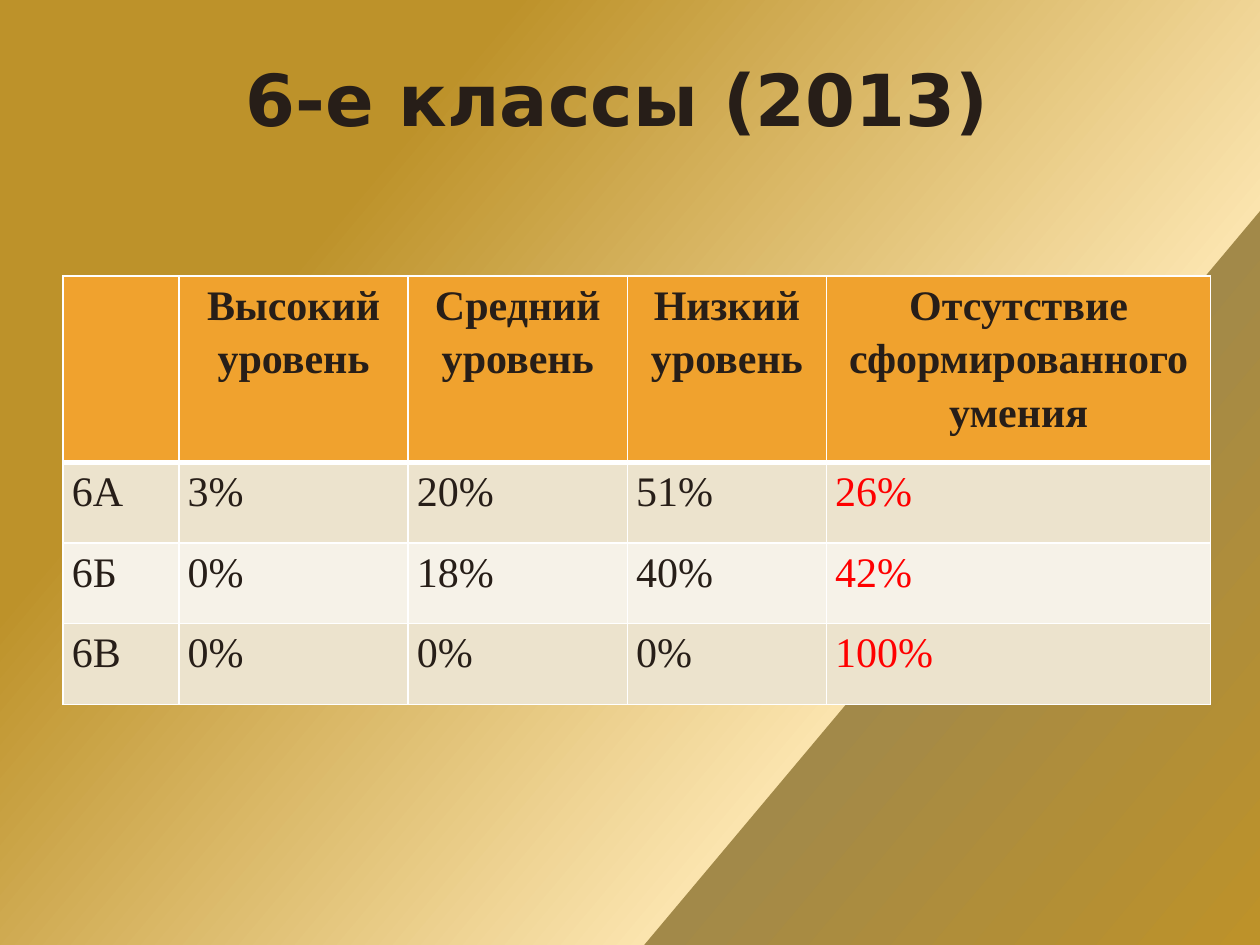
from dataclasses import dataclass

from lxml import etree
from pptx import Presentation
from pptx.dml.color import RGBColor
from pptx.enum.text import MSO_ANCHOR, MSO_AUTO_SIZE, PP_ALIGN
from pptx.oxml.ns import qn
from pptx.util import Inches, Pt

CENTER, LEFT = PP_ALIGN.CENTER, PP_ALIGN.LEFT
MIDDLE = MSO_ANCHOR.MIDDLE
NO_AUTOFIT = MSO_AUTO_SIZE.NONE
TITLE_ONLY = 5

TITLE = "6-е классы (2013) "
HEADER = ["", "Высокий уровень", "Средний уровень", "Низкий уровень",
          "Отсутствие сформированного умения"]
RESULTS = [
    ["6А", "3%", "20%", "51%", "26%"],
    ["6Б", "0%", "18%", "40%", "42%"],
    ["6В", "0%", "0%", "0%", "100%"],
]


@dataclass(frozen=True)
class Theme:
    ink: str = "271E18"
    alert: str = "FF0000"
    header: str = "F0A22E"
    bands: tuple = ("ECE3CD", "F6F2E8")
    border: str = "FFFFFF"
    background: tuple = ((0, "BD922A"), (25, "BD922A"), (70, "FBE4AE"),
                         (70, "A28949"), (100, "BD922A"))
    background_angle: int = 40
    title_font: str = "DejaVu Sans"
    table_font: str = "Times New Roman"
    title_size: int = 41
    table_size: int = 24
    thin: int = 1
    thick: int = 3


THEME = Theme()
SLIDE_W, SLIDE_H = 10, 7.5
MARGIN = 0.05 * SLIDE_W
TITLE_TOP, TITLE_H = 0.04 * SLIDE_H, 0.95
TABLE_TOP = 2.19
COLUMN_WIDTHS = [0.92, 1.82, 1.74, 1.58, 3.05]
ROW_HEIGHTS = [1.48] + [0.64] * len(RESULTS)
CELL_INSET = 0.07


def write(frame, text, *, font, size, color=THEME.ink, bold=False,
          align=LEFT, spacing=None):
    paragraph = frame.paragraphs[0]
    paragraph.alignment = align
    paragraph.line_spacing = spacing
    run = paragraph.add_run()
    run.text = text
    run.font.name, run.font.size, run.font.bold = font, Pt(size), bold
    run.font.color.rgb = RGBColor.from_string(color)


def paint_background(slide):
    fill = slide.background.fill
    fill.gradient()
    fill.gradient_angle = 360 - THEME.background_angle  # counter-clockwise
    stops = next(slide.element.iter(qn("a:gsLst")))
    for default_stop in list(stops):
        stops.remove(default_stop)
    for percent, color in THEME.background:
        stop = etree.SubElement(stops, qn("a:gs"), pos=str(percent * 1000))
        etree.SubElement(stop, qn("a:srgbClr"), val=color)


def set_borders(cell, **widths):
    """Draw cell borders; widths in points are keyed L, R, T, B in that order."""
    properties = cell._tc.get_or_add_tcPr()
    for side, width in widths.items():
        line = etree.SubElement(properties, qn(f"a:ln{side}"), w=str(Pt(width)))
        fill = etree.SubElement(line, qn("a:solidFill"))
        etree.SubElement(fill, qn("a:srgbClr"), val=THEME.border)


def add_title(slide):
    title = slide.shapes.title
    title.left, title.top = Inches(MARGIN), Inches(TITLE_TOP)
    title.width, title.height = Inches(SLIDE_W - 2 * MARGIN), Inches(TITLE_H)
    frame = title.text_frame
    frame.auto_size, frame.vertical_anchor = NO_AUTOFIT, MIDDLE
    write(frame, TITLE, font=THEME.title_font, size=THEME.title_size,
          bold=True, align=CENTER)


def add_results(slide):
    rows = [HEADER] + RESULTS
    table = slide.shapes.add_table(
        len(rows), len(HEADER), Inches(MARGIN), Inches(TABLE_TOP),
        Inches(sum(COLUMN_WIDTHS)), Inches(sum(ROW_HEIGHTS))).table
    for column, width in zip(table.columns, COLUMN_WIDTHS):
        column.width = Inches(width)
    for row, height in zip(table.rows, ROW_HEIGHTS):
        row.height = Inches(height)

    for r, row in enumerate(rows):
        is_header = r == 0
        band = THEME.header if is_header else THEME.bands[(r - 1) % 2]
        for c, text in enumerate(row):
            cell = table.cell(r, c)
            cell.margin_left = cell.margin_right = Inches(CELL_INSET)
            cell.margin_top = cell.margin_bottom = 0
            set_borders(cell, L=THEME.thin, R=THEME.thin,
                        T=THEME.thick if r == 1 else THEME.thin,
                        B=THEME.thick if is_header else THEME.thin)
            cell.fill.solid()
            cell.fill.fore_color.rgb = RGBColor.from_string(band)
            is_alert = not is_header and c == len(HEADER) - 1
            if text:
                write(cell.text_frame, text, font=THEME.table_font,
                      size=THEME.table_size, bold=is_header, spacing=1.15,
                      color=THEME.alert if is_alert else THEME.ink,
                      align=CENTER if is_header else LEFT)


def main():
    deck = Presentation()
    deck.slide_width, deck.slide_height = Inches(SLIDE_W), Inches(SLIDE_H)
    slide = deck.slides.add_slide(deck.slide_layouts[TITLE_ONLY])
    paint_background(slide)
    add_title(slide)
    add_results(slide)
    deck.save("out.pptx")


if __name__ == "__main__":
    main()
